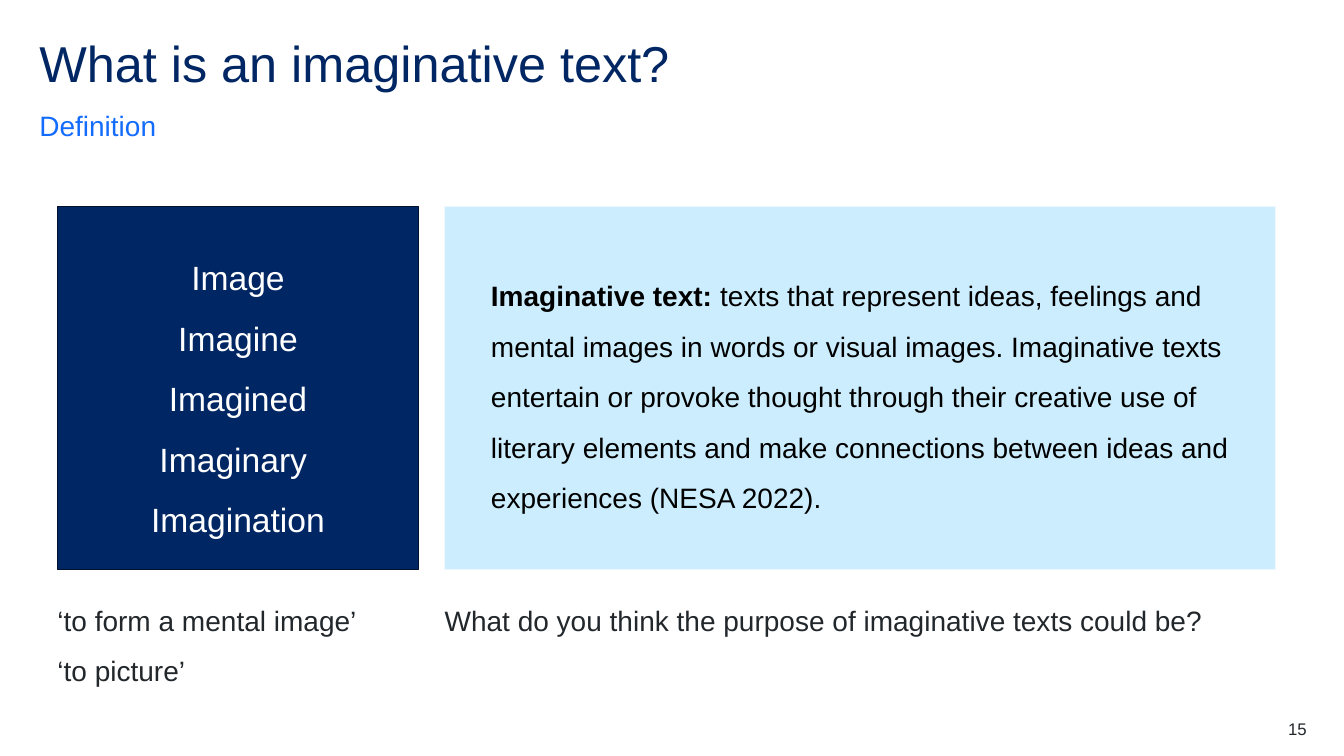
from dataclasses import dataclass

from pptx import Presentation
from pptx.dml.color import RGBColor
from pptx.enum.shapes import MSO_SHAPE
from pptx.enum.text import MSO_ANCHOR, PP_ALIGN
from pptx.slide import Slide
from pptx.util import Inches, Pt

RECTANGLE = MSO_SHAPE.RECTANGLE
TOP, MIDDLE, BOTTOM = MSO_ANCHOR.TOP, MSO_ANCHOR.MIDDLE, MSO_ANCHOR.BOTTOM
LEFT, CENTER, RIGHT = PP_ALIGN.LEFT, PP_ALIGN.CENTER, PP_ALIGN.RIGHT


@dataclass(frozen=True)
class Theme:
    font: str = "Arial"
    navy: str = "002664"
    navy_edge: str = "00112C"
    blue: str = "146CFD"
    pale_blue: str = "CBEDFD"
    ink: str = "22272B"
    black: str = "000000"
    white: str = "FFFFFF"
    title_size: int = 36
    word_size: int = 24
    body_size: int = 20
    number_size: int = 12


THEME = Theme()


@dataclass(frozen=True)
class Block:
    """A text block; each paragraph may open with a bold lead."""
    left: float
    top: float
    width: float
    height: float
    paragraphs: tuple[str, ...]
    size: int = THEME.body_size
    color: str = THEME.ink
    lead: str = ""
    align: PP_ALIGN = LEFT
    anchor: MSO_ANCHOR = TOP
    spacing: float = 1.5
    space_after: int = 0
    side_inset: float = 0
    fill: str = ""
    line: str = ""


MARGIN, HEADING_W = 0.39, 12.56
WORDS_X, WORDS_W = 0.57, 3.58
DEFINITION_X, DEFINITION_W = 4.41, 8.24
PANEL_Y, PANEL_H = 2.05, 3.6
NOTE_Y, NOTE_H = 5.82, 1.13

BLOCKS = (
    Block(MARGIN, 0.39, HEADING_W, 0.6, ("What is an imaginative text?",),
          THEME.title_size, THEME.navy, spacing=0.9),
    Block(MARGIN, 1.07, HEADING_W, 0.34, ("Definition",),
          color=THEME.blue, anchor=BOTTOM, space_after=12),
    Block(WORDS_X, PANEL_Y, WORDS_W, PANEL_H,
          ("Image", "Imagine", "Imagined", "Imaginary ", "Imagination"),
          THEME.word_size, THEME.white, align=CENTER, anchor=MIDDLE,
          side_inset=0.1, fill=THEME.navy, line=THEME.navy_edge),
    Block(WORDS_X, NOTE_Y, 3.44, NOTE_H,
          ("‘to form a mental image’", "‘to picture’")),
    Block(DEFINITION_X, PANEL_Y, DEFINITION_W, PANEL_H,
          ("texts that represent ideas, feelings and mental images in words or "
           "visual images. Imaginative texts entertain or provoke thought through "
           "their creative use of literary elements and make connections between "
           "ideas and experiences (NESA 2022).",),
          color=THEME.black, lead="Imaginative text: ", anchor=MIDDLE,
          side_inset=0.46, fill=THEME.pale_blue),
    Block(DEFINITION_X, NOTE_Y, DEFINITION_W, NOTE_H,
          ("What do you think the purpose of imaginative texts could be?",)),
    Block(12.17, 7.13, 0.79, 0.2, ("15",), THEME.number_size,
          align=RIGHT, spacing=1),
)


def add_block(slide: Slide, block: Block) -> None:
    """Draw a filled rectangle if the block has a fill, else a text box."""
    box = [Inches(v) for v in (block.left, block.top, block.width, block.height)]
    if block.fill:
        s = slide.shapes.add_shape(RECTANGLE, *box)
        s.shadow.inherit = False
        s.fill.solid()
        s.fill.fore_color.rgb = RGBColor.from_string(block.fill)
        if block.line:
            s.line.color.rgb = RGBColor.from_string(block.line)
            s.line.width = Pt(1)
        else:
            s.line.fill.background()
    else:
        s = slide.shapes.add_textbox(*box)

    tf = s.text_frame
    tf.word_wrap = True
    tf.vertical_anchor = block.anchor
    tf.margin_left = tf.margin_right = Inches(block.side_inset)
    tf.margin_top = tf.margin_bottom = 0
    for i, text in enumerate(block.paragraphs):
        p = tf.add_paragraph() if i else tf.paragraphs[0]
        p.alignment = block.align
        p.line_spacing = block.spacing
        p.space_after = Pt(block.space_after)
        p.font.name = THEME.font
        p.font.size = Pt(block.size)
        p.font.color.rgb = RGBColor.from_string(block.color)
        if block.lead:
            r = p.add_run()
            r.text = block.lead
            r.font.bold = True
        p.add_run().text = text


def main() -> None:
    prs = Presentation()
    prs.slide_width, prs.slide_height = Inches(13.33), Inches(7.5)
    slide = prs.slides.add_slide(prs.slide_layouts[6])
    for block in BLOCKS:
        add_block(slide, block)
    prs.save("out.pptx")


if __name__ == "__main__":
    main()
